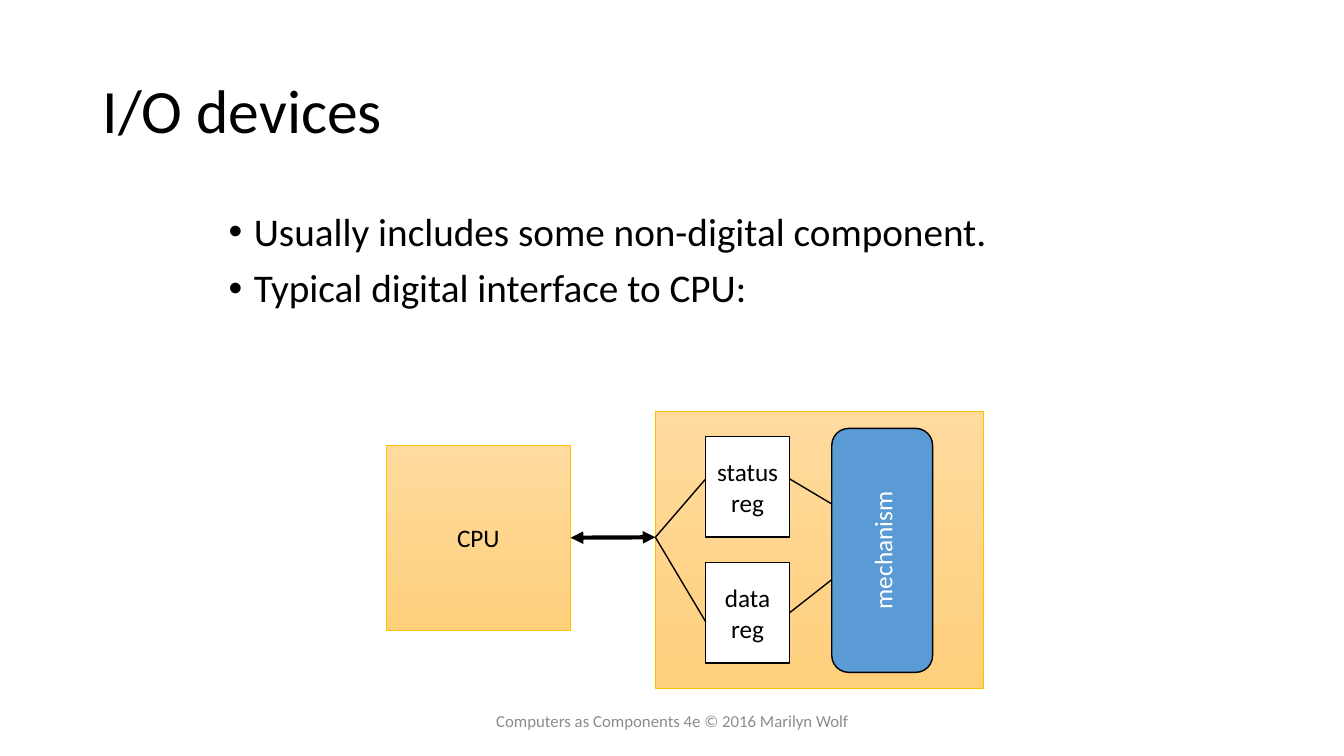
import pptx
import pptx.dml.color
import pptx.enum.shapes
import pptx.enum.text
import pptx.oxml.ns
import pptx.util
from dataclasses import dataclass
from lxml import etree

Inches = pptx.util.Inches
Shapes = pptx.enum.shapes.MSO_SHAPE
Align = pptx.enum.text.PP_ALIGN
Anchor = pptx.enum.text.MSO_ANCHOR
qn = pptx.oxml.ns.qn


@dataclass(frozen=True)
class Theme:
    font: str = "Calibri"
    black: str = "000000"
    white: str = "FFFFFF"
    footer_gray: str = "8C8C8C"
    mechanism_blue: str = "5B9BD5"
    gold: str = "FFC000"
    gold_gradient: tuple = ("FFDB9E", "FFD07C")
    title_size: int = 44
    body_size: int = 28
    label_size: int = 18
    footer_size: int = 12


def rgb(color):
    return pptx.dml.color.RGBColor.from_string(color)


class SlideBuilder:
    def __init__(self, presentation, theme):
        self.theme = theme
        self.slide = presentation.slides.add_slide(presentation.slide_layouts[6])

    def set_text(self, shape, text, size, color, align, anchor, wrap):
        frame = shape.text_frame
        frame.text = text
        frame.word_wrap = wrap
        frame.vertical_anchor = anchor
        for paragraph in frame.paragraphs:
            paragraph.alignment = align
            for run in paragraph.runs:
                run.font.name = self.theme.font
                run.font.size = pptx.util.Pt(size)
                run.font.color.rgb = rgb(color)

    def text(self, box, text, size, color, align=Align.LEFT, anchor=Anchor.MIDDLE):
        shape = self.slide.shapes.add_textbox(*map(Inches, box))
        self.set_text(shape, text, size, color, align, anchor, True)
        return shape

    def bullets(self, box, items):
        shape = self.text(box, "\n".join(items), self.theme.body_size,
                          self.theme.black, anchor=Anchor.TOP)
        for paragraph in shape.text_frame.paragraphs:
            paragraph.line_spacing = 0.9
            paragraph.space_before = pptx.util.Pt(10)
            properties = paragraph._p.get_or_add_pPr()
            properties.set("marL", str(Inches(0.25)))
            properties.set("indent", str(-Inches(0.25)))
            etree.SubElement(properties, qn("a:buFont")).set("typeface", "Arial")
            etree.SubElement(properties, qn("a:buChar")).set("char", "•")

    def block(self, box, fill, line, line_width, label="", color=Theme.black,
              kind=Shapes.RECTANGLE, rotation=0):
        shape = self.slide.shapes.add_shape(kind, *map(Inches, box))
        shape.shadow.inherit = False
        shape.rotation = rotation
        if isinstance(fill, tuple):
            shape.fill.gradient()
            shape.fill.gradient_angle = 270
            for stop, stop_color in zip(shape.fill.gradient_stops, fill):
                stop.color.rgb = rgb(stop_color)
        else:
            shape.fill.solid()
            shape.fill.fore_color.rgb = rgb(fill)
        shape.line.color.rgb = rgb(line)
        shape.line.width = pptx.util.Pt(line_width)
        if label:
            self.set_text(shape, label, self.theme.label_size, color,
                          Align.CENTER, Anchor.MIDDLE, False)
        return shape

    def line(self, start, end, width=1, double_arrow=False):
        connector = self.slide.shapes.add_connector(
            pptx.enum.shapes.MSO_CONNECTOR.STRAIGHT, *map(Inches, start + end))
        connector.line.color.rgb = rgb(self.theme.black)
        connector.line.width = pptx.util.Pt(width)
        if double_arrow:
            for tag in ("a:headEnd", "a:tailEnd"):
                etree.SubElement(connector.line._ln, qn(tag)).set("type", "triangle")
        etree.SubElement(connector._element.spPr, qn("a:effectLst"))
        return connector


def main():
    presentation = pptx.Presentation()
    presentation.slide_width = Inches(13.33)
    presentation.slide_height = Inches(7.5)
    theme = Theme()
    builder = SlideBuilder(presentation, theme)

    # Title and bullets
    title = builder.text((0.92, 0.4, 11.5, 1.45), "I/O devices", theme.title_size, theme.black)
    title.text_frame.paragraphs[0].line_spacing = 0.9
    builder.bullets((2.17, 2.06, 8.94, 2.02), (
        "Usually includes some non-digital component.",
        "Typical digital interface to CPU:",
    ))

    # CPU and device enclosure
    cpu = builder.block((3.83, 4.42, 1.83, 1.83), theme.gold_gradient, theme.gold, 0.5, "CPU")
    builder.block((6.5, 4.08, 3.25, 2.75), theme.gold_gradient, theme.gold, 0.5)

    # Registers and mechanism
    registers = [
        builder.block((7, 4.33 + 1.25 * row, 0.83, 1), theme.white, theme.black, 1,
                      f"{name}\nreg")
        for row, name in enumerate(("status", "data"))
    ]
    builder.block((7.54, 4.96, 2.42, 1), theme.mechanism_blue, theme.black, 1, "mechanism",
                  theme.white, Shapes.ROUNDED_RECTANGLE, 270)

    # Bus between CPU and device
    port = (6.5, 5.33)
    bus = builder.line((5.66, 5.33), port, 3, double_arrow=True)
    bus.begin_connect(cpu, 3)

    # Register wiring
    builder.line((7.83, 4.75), (8.25, 5))
    data_link = builder.line((7.83, 6.08), (8.25, 5.75))
    data_link.begin_connect(registers[1], 3)
    for register_y in (4.75, 6.17):
        builder.line((7, register_y), port)

    # Footer
    builder.text((4.42, 6.95, 4.5, 0.4), "Computers as Components 4e © 2016 Marilyn Wolf",
                 theme.footer_size, theme.footer_gray, Align.CENTER)

    presentation.save("out.pptx")


if __name__ == "__main__":
    main()
